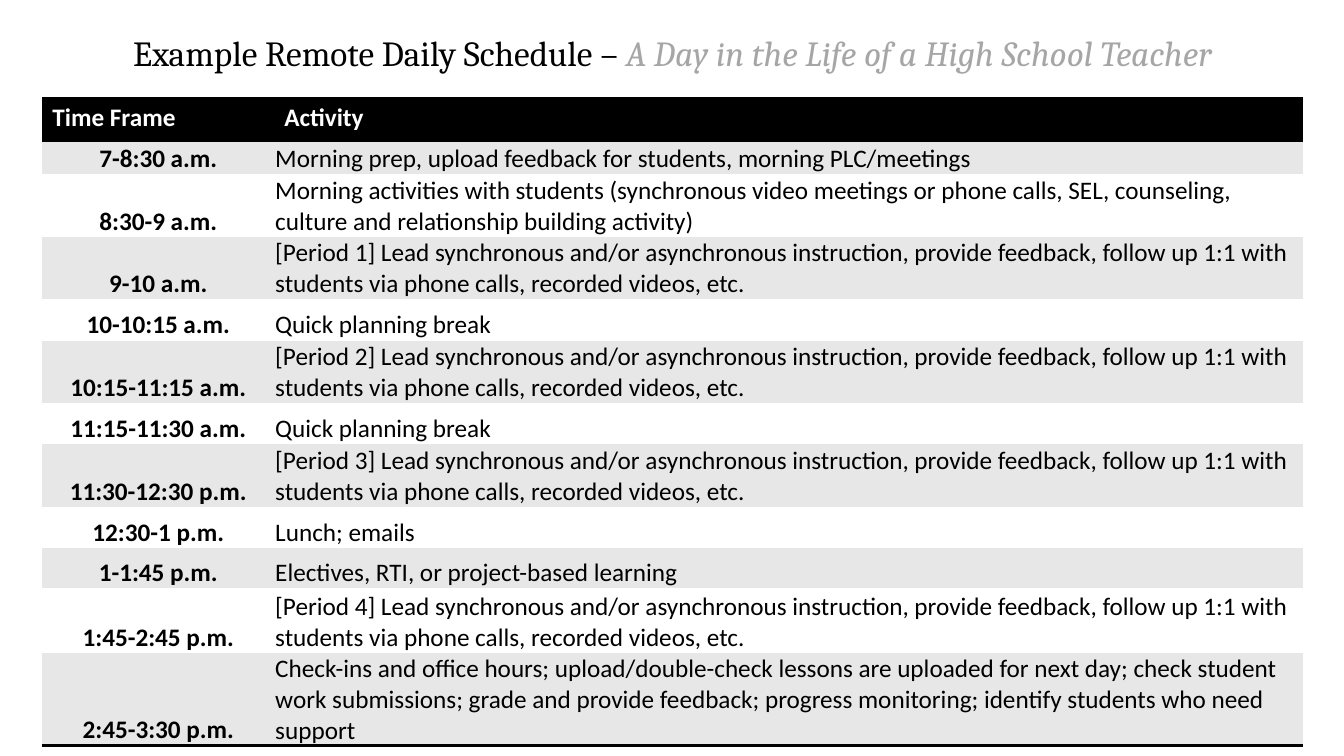
from lxml.etree import SubElement
from pptx import Presentation
from pptx.dml.color import RGBColor
from pptx.enum.text import MSO_ANCHOR as Anchor, PP_ALIGN as Align
from pptx.oxml.ns import qn
from pptx.util import Pt

PX = 9144
BLACK, WHITE, BAND, GREY = "000000", "FFFFFF", "E7E7E7", "A6A6A6"
NO_STYLE = "{2D5ABB26-0587-4C30-8999-92F81FD0307C}"

TITLE = [
    ("Example Remote Daily Schedule – ", BLACK, False),
    ("A Day in the Life of a High School Teacher", GREY, True),
]
BREAK = ["Quick planning break"]


def period(number):
    """Return the activity lines of a teaching period."""
    return [
        f"[Period {number}] Lead synchronous and/or asynchronous instruction, "
        "provide feedback, follow up 1:1 with",
        "students via phone calls, recorded videos, etc.",
    ]


SCHEDULE = [
    (33, "7-8:30 a.m.", ["Morning prep, upload feedback for students, morning PLC/meetings"]),
    (62, "8:30-9 a.m.", [
        "Morning activities with students (synchronous video meetings or phone calls, "
        "SEL, counseling, culture and relationship building activity)"]),
    (62, "9-10 a.m.", period(1)),
    (41, "10-10:15 a.m.", BREAK),
    (62, "10:15-11:15 a.m.", period(2)),
    (41, "11:15-11:30 a.m.", BREAK),
    (62, "11:30-12:30 p.m.", period(3)),
    (41, "12:30-1 p.m.", ["Lunch; emails"]),
    (40, "1-1:45 p.m.", ["Electives, RTI, or project-based learning"]),
    (64, "1:45-2:45 p.m.", period(4)),
    (92, "2:45-3:30 p.m.", [
        "Check-ins and office hours; upload/double-check lessons are uploaded for next day; check student",
        "work submissions; grade and provide feedback; progress monitoring; identify students who need",
        "support"]),
]


def px(length):
    """Turn whole pixels into EMU."""
    return length * PX


def color(value):
    """Turn a hex string into a colour."""
    return RGBColor.from_string(value)


def apply(target, **values):
    """Set attributes from a dict of format values."""
    for name, value in values.items():
        setattr(target, name, value)


def add_run(paragraph, text, ink, **font):
    """Add a run of text with its colour and font values."""
    run = paragraph.add_run()
    run.text = text
    run.font.color.rgb = color(ink)
    apply(run.font, **font)


def add_rule(cell, edge):
    """Draw a black two-point border on one edge of a cell."""
    rule = SubElement(cell._tc.get_or_add_tcPr(), qn(f"a:{edge}"), w=str(Pt(2)))
    SubElement(SubElement(rule, qn("a:solidFill")), qn("a:srgbClr"), val=BLACK)


def fill_cell(cell, lines, back, ink, bold, align, edges, **layout):
    """Write lines into a cell and give it borders, fill and layout."""
    for edge in edges:
        add_rule(cell, edge)
    cell.fill.solid()
    cell.fill.fore_color.rgb = color(back)
    apply(cell, **layout)
    frame = cell.text_frame
    for index, line in enumerate(lines):
        paragraph = frame.add_paragraph() if index else frame.paragraphs[0]
        paragraph.alignment = align
        add_run(paragraph, line, ink, name="Calibri", size=Pt(18), bold=bold)


def add_title(slide, left, top, width, height):
    """Place the two-tone title centred in its box."""
    frame = slide.shapes.add_textbox(px(left), px(top), px(width), px(height)).text_frame
    apply(frame, word_wrap=True, vertical_anchor=Anchor.MIDDLE)
    heading = frame.paragraphs[0]
    apply(heading, alignment=Align.CENTER, line_spacing=0.9)
    for text, ink, italic in TITLE:
        add_run(heading, text, ink, name="Cambria", size=Pt(25.2), italic=italic)


def add_schedule(slide, left, top, width, header_height, time_width):
    """Place the schedule table with its header and banded rows."""
    heights = [header_height] + [height for height, _, _ in SCHEDULE]
    table = slide.shapes.add_table(
        len(heights), 2, px(left), px(top), px(width), px(sum(heights))).table
    apply(table, first_row=False, horz_banding=False)
    table._tbl.tblPr.find(qn("a:tableStyleId")).text = NO_STYLE
    for column, column_width in zip(table.columns, (time_width, width - time_width)):
        column.width = px(column_width)
    for row, height in zip(table.rows, heights):
        row.height = px(height)

    for column, heading in enumerate(("Time Frame", "Activity")):
        fill_cell(table.cell(0, column), [heading], BLACK, WHITE, True,
                  Align.LEFT, ("lnT", "lnB"))

    tight = dict(margin_left=px(1), margin_right=px(1), margin_top=px(1),
                 margin_bottom=0, vertical_anchor=Anchor.BOTTOM)
    for index, (_, time, activity) in enumerate(SCHEDULE, 1):
        back = BAND if index % 2 else WHITE
        edges = ("lnB",) if index == len(SCHEDULE) else ()
        fill_cell(table.cell(index, 0), [time], back, BLACK, True, Align.CENTER, edges, **tight)
        fill_cell(table.cell(index, 1), activity, back, BLACK, False, Align.LEFT, edges, **tight)


def main():
    """Build and save the schedule slide."""
    deck = Presentation()
    apply(deck, slide_width=px(1333), slide_height=px(750))
    slide = deck.slides.add_slide(deck.slide_layouts[6])
    add_title(slide, 92, 12, 1150, 86)
    add_schedule(slide, 42, 97, 1250, 43, 230)
    deck.save("out.pptx")


if __name__ == "__main__":
    main()
